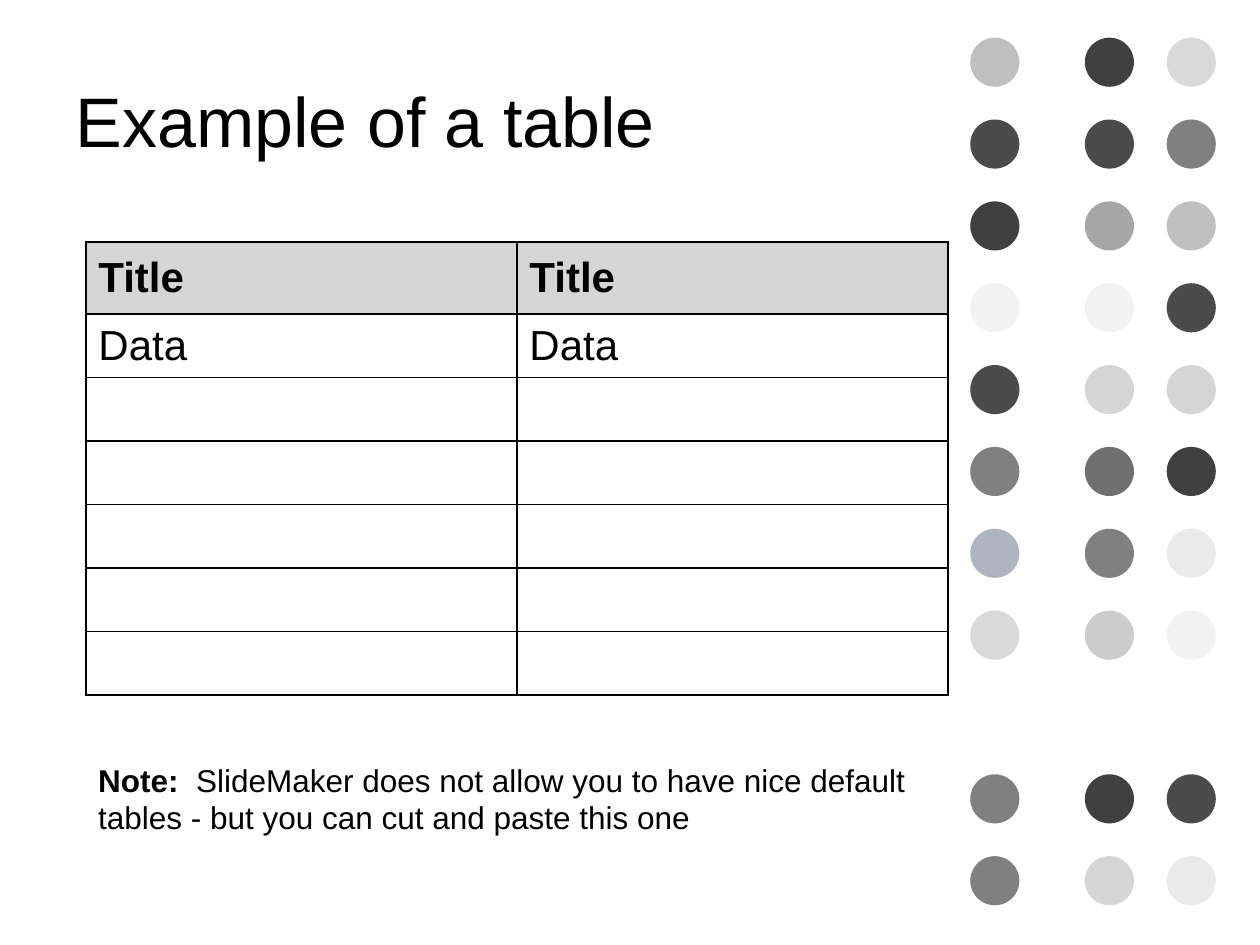
from lxml import etree
from pptx import Presentation
from pptx import util as u
from pptx.dml.color import RGBColor
from pptx.enum import shapes, text
from pptx.oxml import ns

COLORS = {
    "text": "000000", "border": "000000", "header": "D5D5D5",
    "dark": "404040", "charcoal": "4B4B4B", "slate": "707070",
    "gray": "808080", "medium": "A6A6A6", "blue": "AEB5C0",
    "silver": "BFBFBF", "light": "CCCCCC", "pale": "D5D5D5",
    "paler": "D9D9D9", "mist": "EAEAEA", "white": "F2F2F2",
}

DOT_COLUMNS = (19.56, 21.87, 23.52)
DOT_ROWS = [
    ("silver", "dark", "paler"),
    ("charcoal", "charcoal", "gray"),
    ("dark", "medium", "silver"),
    ("white", "white", "charcoal"),
    ("charcoal", "pale", "pale"),
    ("gray", "slate", "dark"),
    ("blue", "gray", "mist"),
    ("paler", "light", "white"),
    (),
    ("gray", "dark", "charcoal"),
    ("gray", "pale", "mist"),
]
TABLE_ROWS = [("Title", "Title"), ("Data", "Data")] + [("", "")] * 5
NOTE = [
    ("Note:  ", True),
    ("SlideMaker does not allow you to have nice default "
     "tables - but you can cut and paste this one", False),
]


def rgb(name):
    return RGBColor.from_string(COLORS[name])


class SlideBuilder:
    """Holds the text style and the slide being filled."""

    font = "Arial"

    def __init__(self, slide):
        self.slide = slide

    def format_font(self, font, size, bold=False):
        values = {"name": self.font, "size": u.Pt(size), "bold": bold}
        for key, value in values.items():
            setattr(font, key, value)
        font.color.rgb = rgb("text")

    def dot(self, x, y, color, size=0.99):
        sp = self.slide.shapes.add_shape(
            shapes.MSO_SHAPE.OVAL, u.Cm(x), u.Cm(y), u.Cm(size), u.Cm(size))
        sp.shadow.inherit = False
        sp.fill.solid()
        sp.fill.fore_color.rgb = rgb(color)
        sp.line.fill.background()

    def title(self, words, x, y, width, height):
        sp = self.slide.shapes.title
        box = {"left": x, "top": y, "width": width, "height": height}
        for key, value in box.items():
            setattr(sp, key, u.Cm(value))
        tf = sp.text_frame
        tf.text = words
        tf.vertical_anchor = text.MSO_ANCHOR.MIDDLE
        p = tf.paragraphs[0]
        p.alignment = text.PP_ALIGN.LEFT
        self.format_font(p.runs[0].font, 40)

    def borders(self, cell):
        """Draw a one-point line on all four sides of the cell."""
        tc_pr = cell._tc.get_or_add_tcPr()
        for side in ("lnL", "lnR", "lnT", "lnB"):
            ln = etree.SubElement(tc_pr, ns.qn(f"a:{side}"), w=str(u.Pt(1)))
            fill = etree.SubElement(ln, ns.qn("a:solidFill"))
            etree.SubElement(fill, ns.qn("a:srgbClr"), val=COLORS["border"])

    def table(self, rows, x, y, col_width, header_height, row_height):
        width = col_width * len(rows[0])
        height = header_height + row_height * (len(rows) - 1)
        table = self.slide.shapes.add_table(
            len(rows), len(rows[0]),
            u.Cm(x), u.Cm(y), u.Cm(width), u.Cm(height)).table
        table.first_row = table.horz_banding = False
        for column in table.columns:
            column.width = u.Cm(col_width)
        for i, words in enumerate(rows):
            header = i == 0
            table.rows[i].height = u.Cm(header_height if header else row_height)
            for j, word in enumerate(words):
                self.cell(table.cell(i, j), word, header)

    def cell(self, cell, word, header):
        self.borders(cell)
        if header:
            cell.fill.solid()
            cell.fill.fore_color.rgb = rgb("header")
        else:
            cell.fill.background()
        cell.vertical_anchor = text.MSO_ANCHOR.MIDDLE
        p = cell.text_frame.paragraphs[0]
        if word:
            r = p.add_run()
            r.text = word
            self.format_font(r.font, 24, header)

    def note(self, runs, x, y, width, height):
        sp = self.slide.shapes.add_textbox(
            u.Cm(x), u.Cm(y), u.Cm(width), u.Cm(height))
        tf = sp.text_frame
        tf.word_wrap = True
        tf.auto_size = text.MSO_AUTO_SIZE.SHAPE_TO_FIT_TEXT
        for words, bold in runs:
            r = tf.paragraphs[0].add_run()
            r.text = words
            self.format_font(r.font, 18, bold)


def main():
    prs = Presentation()
    prs.slide_width, prs.slide_height = u.Cm(25.4), u.Cm(19.05)
    title_only = prs.slide_layouts[5]
    builder = SlideBuilder(prs.slides.add_slide(title_only))

    for i, colors in enumerate(DOT_ROWS):
        for x, color in zip(DOT_COLUMNS, colors):
            builder.dot(x, 0.76 + 1.65 * i, color)
    builder.title("Example of a table", 1.27, 0.71, 19.3, 3.4)
    builder.table(TABLE_ROWS, 1.73, 4.88, 8.69, 1.45, 1.28)
    builder.note(NOTE, 1.73, 15.21, 17.02, 1.8)
    prs.save("out.pptx")


if __name__ == "__main__":
    main()
